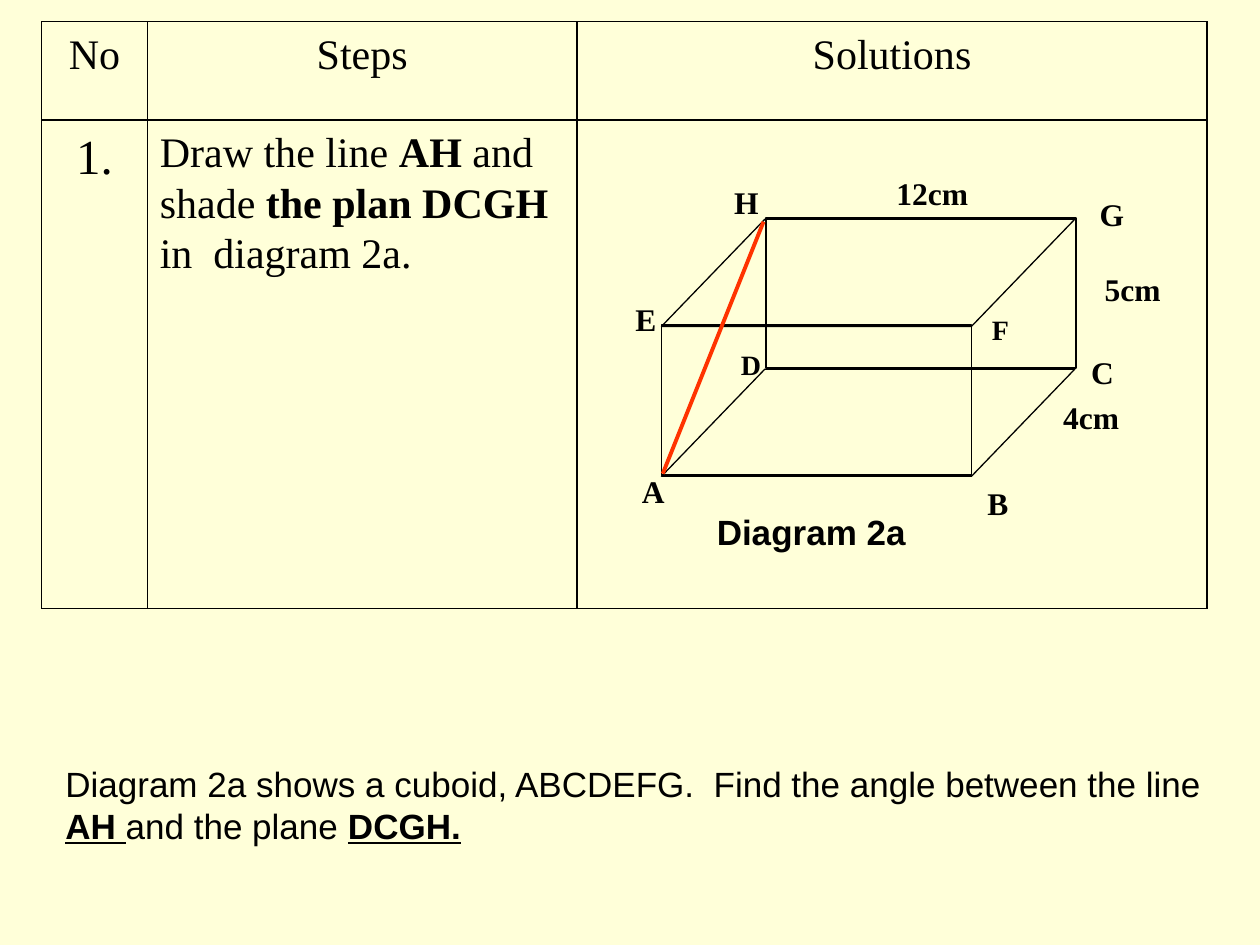
"""Build a slide on the angle between a line and a plane of a cuboid."""
from typing import NamedTuple

from lxml import etree
from pptx import Presentation
from pptx.dml.color import RGBColor
from pptx.enum.shapes import MSO_CONNECTOR, MSO_SHAPE
from pptx.enum.text import PP_ALIGN
from pptx.oxml.ns import qn
from pptx.util import Inches, Pt

LEFT, CENTER = PP_ALIGN.LEFT, PP_ALIGN.CENTER
RECT, SLANT = MSO_SHAPE.RECTANGLE, MSO_SHAPE.PARALLELOGRAM
STRAIGHT = MSO_CONNECTOR.STRAIGHT
SERIF, SANS = "Times New Roman", "Arial"
COLORS = {"back": "FFFFD9", "ink": "000000", "red": "FF3300"}


class Run(NamedTuple):
    text: str
    bold: bool = False
    under: bool = False


class Entry(NamedTuple):
    runs: list[Run]
    size: float = 24
    align: PP_ALIGN = CENTER


class Label(NamedTuple):
    text: str
    left: float
    top: float
    width: float
    height: float
    size: float = 18


class Face(NamedTuple):
    kind: MSO_SHAPE
    left: float
    top: float
    width: float
    height: float
    line: float = 0.75


COLS = [0.33, 1.17, 4.58, 9.58]
ROWS = [0.17, 0.95, 4.83]
CELLS = [
    [Entry([Run("No")]), Entry([Run("Steps")]), Entry([Run("Solutions")])],
    [
        Entry([Run("1.")], 28),
        Entry([Run("Draw the line "), Run("AH", True), Run(" and shade "),
               Run("the plan DCGH", True), Run(" in  diagram 2a.")], 24, LEFT),
    ],
]
SLOPE = 0.82
FACES = [
    Face(RECT, 6.08, 1.73, 2.46, 1.19, 1),
    Face(SLANT, 5.25, 1.74, 3.28, 0.85),
    Face(SLANT, 5.25, 2.93, 3.28, 0.85),
    Face(RECT, 5.25, 2.58, 2.46, 1.19),
]
LABELS = [
    Label("A", 4.85, 3.7, 0.67, 0.63),
    Label("B", 7.67, 3.79, 0.5, 0.54),
    Label("C", 8.5, 2.75, 0.5, 0.54),
    Label("D", 5.64, 2.71, 0.64, 0.6, 16),
    Label("E", 4.75, 2.33, 0.75, 0.47),
    Label("F", 7.6, 2.43, 0.68, 0.47, 16),
    Label("G", 8.33, 1.5, 0.99, 0.56),
    Label("H", 5.66, 1.4, 0.53, 0.59),
    Label("5cm", 8.39, 2.09, 1.2, 0.55),
    Label("4cm", 8.03, 3.11, 1.26, 0.55),
    Label("12cm", 6.77, 1.33, 1.26, 0.55),
]
TASK = [
    Run("Diagram 2a shows a cuboid, ABCDEFG.  Find the angle between the line "),
    Run("AH", True, True), Run(" ", False, True),
    Run("and the plane "), Run("DCGH.", True, True),
]


def tint(name: str) -> RGBColor:
    """Return a named colour."""
    return RGBColor.from_string(COLORS[name])


def put_text(slide, box: tuple, entry: Entry, font: str) -> None:
    """Add a text box and fill it run by run."""
    frame = slide.shapes.add_textbox(*map(Inches, box)).text_frame
    frame.word_wrap = True
    para = frame.paragraphs[0]
    para.alignment = entry.align
    for item in entry.runs:
        run = para.add_run()
        run.text = item.text
        run.font.name = font
        run.font.size = Pt(entry.size)
        run.font.bold = item.bold
        run.font.underline = item.under
        run.font.color.rgb = tint("ink")


def put_line(slide, start: tuple, end: tuple, color: str, width: float) -> None:
    """Add a straight line."""
    line = slide.shapes.add_connector(STRAIGHT, *map(Inches, start + end))
    line.line.color.rgb = tint(color)
    line.line.width = Pt(width)
    etree.SubElement(line._element.spPr, qn("a:effectLst"))


def put_grid(slide) -> None:
    """Add the steps and the ruled lines around them."""
    for top, base, line in zip(ROWS, ROWS[1:], CELLS):
        for left, right, entry in zip(COLS, COLS[1:], line):
            put_text(slide, (left, top, right - left, base - top), entry, SERIF)
    for y in ROWS:
        put_line(slide, (COLS[0], y), (COLS[-1], y), "ink", 1)
    for x in COLS:
        put_line(slide, (x, ROWS[0]), (x, ROWS[-1]), "ink", 1)


def put_face(slide, face: Face) -> None:
    """Add one open face of the cuboid."""
    box = (face.left, face.top, face.width, face.height)
    shape = slide.shapes.add_shape(face.kind, *map(Inches, box))
    if face.kind == SLANT:
        shape.rotation = 180
        shape.adjustments[0] = SLOPE / face.height
    shape.shadow.inherit = False
    shape.fill.background()
    shape.line.color.rgb = tint("ink")
    shape.line.width = Pt(face.line)


def main() -> None:
    """Build and save the slide."""
    deck = Presentation()
    deck.slide_width, deck.slide_height = Inches(10), Inches(7.5)
    slide = deck.slides.add_slide(deck.slide_layouts[6])
    slide.background.fill.solid()
    slide.background.fill.fore_color.rgb = tint("back")
    put_grid(slide)
    for face in FACES:
        put_face(slide, face)
    for label in LABELS:
        entry = Entry([Run(label.text, True)], label.size)
        put_text(slide, label[1:5], entry, SERIF)
    put_line(slide, (6.06, 1.76), (5.26, 3.76), "red", 2.25)
    title = Entry([Run("Diagram 2a", True)], 20, LEFT)
    put_text(slide, (5.59, 4, 1.92, 0.43), title, SANS)
    put_text(slide, (0.42, 6, 9.25, 0.83), Entry(TASK, 20, LEFT), SANS)
    deck.save("out.pptx")


if __name__ == "__main__":
    main()
